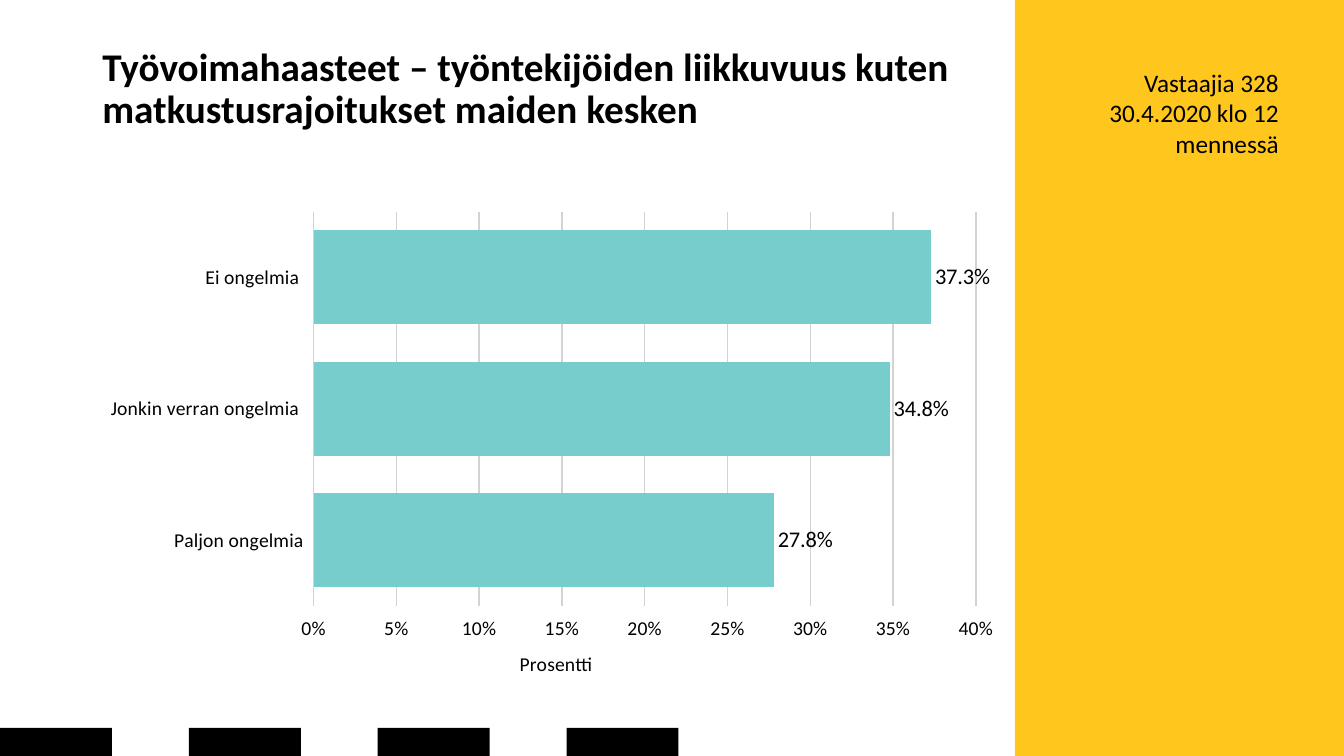
from lxml.etree import SubElement
from pptx import Presentation
from pptx.chart.data import CategoryChartData
from pptx.dml.color import RGBColor
from pptx.enum.chart import (XL_CHART_TYPE, XL_LABEL_POSITION, XL_TICK_LABEL_POSITION,
                             XL_TICK_MARK)
from pptx.enum.shapes import MSO_SHAPE
from pptx.enum.text import MSO_ANCHOR, PP_ALIGN
from pptx.oxml.ns import qn
from pptx.util import Pt

YELLOW = RGBColor(0xFF, 0xC6, 0x1E)
BLACK = RGBColor(0x00, 0x00, 0x00)
TEAL = RGBColor(0x77, 0xCD, 0xCB)
GRID = RGBColor(0xD3, 0xD3, 0xD3)
WIDTH, HEIGHT = 960, 540
FONT = "Calibri"


def style_font(font, size, bold=False):
    """Apply the slide's typeface with the given size."""
    values = {"name": FONT, "size": Pt(size), "bold": bold}
    for name, value in values.items():
        setattr(font, name, value)
    font.color.rgb = BLACK


def add_rect(slide, box, color):
    """Add a plain filled rectangle."""
    sp = slide.shapes.add_shape(MSO_SHAPE.RECTANGLE, *map(Pt, box))
    sp.shadow.inherit = False
    sp.fill.solid()
    sp.fill.fore_color.rgb = color
    sp.line.fill.background()


def add_text(slide, box, lines, size, bold=False, anchor=MSO_ANCHOR.TOP, **formats):
    """Add a wrapped text box with one paragraph per line."""
    tf = slide.shapes.add_textbox(*map(Pt, box)).text_frame
    tf.word_wrap = True
    tf.vertical_anchor = anchor
    for i, line in enumerate(lines):
        p = tf.add_paragraph() if i else tf.paragraphs[0]
        for name, value in formats.items():
            setattr(p, name, value)
        r = p.add_run()
        r.text = line
        style_font(r.font, size, bold)


def add_footer_blocks(slide, box, count, pitch):
    """Repeat a black block along the bottom edge."""
    left, top, width, height = box
    for i in range(count):
        add_rect(slide, (left + i * pitch, top, width, height), BLACK)


def set_layout(parent, index, **values):
    """Place a chart part by fractions of the chart area."""
    for old in parent.findall(qn("c:layout")):
        parent.remove(old)
    layout = SubElement(parent, qn("c:layout"))
    parent.insert(index, layout)
    manual = SubElement(layout, qn("c:manualLayout"))
    for tag, value in values.items():
        SubElement(manual, qn(f"c:{tag}")).set("val", str(value))


def add_bar_chart(slide, box):
    """Add the bar chart of answer shares."""
    data = CategoryChartData(number_format="0.0%")
    data.categories = ["Ei ongelmia ", "Jonkin verran ongelmia ", "Paljon ongelmia"]
    data.add_series("Series 1", (0.373, 0.348, 0.278))
    chart = slide.shapes.add_chart(XL_CHART_TYPE.BAR_CLUSTERED, *map(Pt, box), data).chart
    style_font(chart.font, 18)
    chart.has_legend = False
    chart.has_title = False

    plot = chart.plots[0]
    plot.gap_width = 40
    plot.vary_by_categories = False
    fmt = plot.series[0].format
    fmt.fill.solid()
    fmt.fill.fore_color.rgb = TEAL
    fmt.line.fill.background()
    plot.has_data_labels = True
    labels = plot.data_labels
    values = {"show_value": True, "number_format": "0.0%", "number_format_is_linked": False,
              "position": XL_LABEL_POSITION.OUTSIDE_END}
    for name, value in values.items():
        setattr(labels, name, value)
    style_font(labels.font, 16)

    cat, val = chart.category_axis, chart.value_axis
    for axis in (cat, val):
        axis.major_tick_mark = XL_TICK_MARK.CROSS
        axis.format.line.fill.background()
        style_font(axis.tick_labels.font, 14)
    cat.reverse_order = True
    values = {"minimum_scale": 0, "maximum_scale": 0.4, "major_unit": 0.05,
              "has_major_gridlines": True, "tick_label_position": XL_TICK_LABEL_POSITION.HIGH}
    for name, value in values.items():
        setattr(val, name, value)
    val.tick_labels.number_format = "0%"
    val.tick_labels.number_format_is_linked = False
    line = val.major_gridlines.format.line
    line.color.rgb = GRID
    line.width = Pt(1)

    p = val.axis_title.text_frame.paragraphs[0]
    r = p.add_run()
    r.text = "Prosentti"
    style_font(r.font, 14)
    set_layout(val.axis_title._element, 1, xMode="edge", yMode="edge", x=0.46, y=0.89)
    set_layout(chart._chartSpace.chart.plotArea, 0, layoutTarget="inner", xMode="edge",
               yMode="edge", x=0.24, y=0.02, w=0.72, h=0.79)


def build_slide(prs, box):
    """Build the survey result slide inside the given box."""
    left, top, width, height = box
    slide = prs.slides.add_slide(prs.slide_layouts[6])
    panel = left + 725
    add_rect(slide, (panel, top, left + width - panel, height), YELLOW)
    add_footer_blocks(slide, (left, top + height - 20, 80, 20), 4, 134.9)
    add_text(slide, (left + 66, top + 29, 657, 70.5),
             ["Työvoimahaasteet – työntekijöiden liikkuvuus kuten "
              "matkustusrajoitukset maiden kesken"],
             28, True, MSO_ANCHOR.MIDDLE, line_spacing=0.9)
    add_text(slide, (panel + 46.6, top + 44.6, 149, 72.7),
             ["Vastaajia 328", "30.4.2020 klo 12 mennessä"], 18, alignment=PP_ALIGN.RIGHT)
    add_bar_chart(slide, (left + 66.4, top + 144, 657, 357))


def main():
    """Create and save the presentation."""
    prs = Presentation()
    prs.slide_width, prs.slide_height = Pt(WIDTH), Pt(HEIGHT)
    build_slide(prs, (0, 0, WIDTH, HEIGHT))
    prs.save("out.pptx")


if __name__ == "__main__":
    main()
